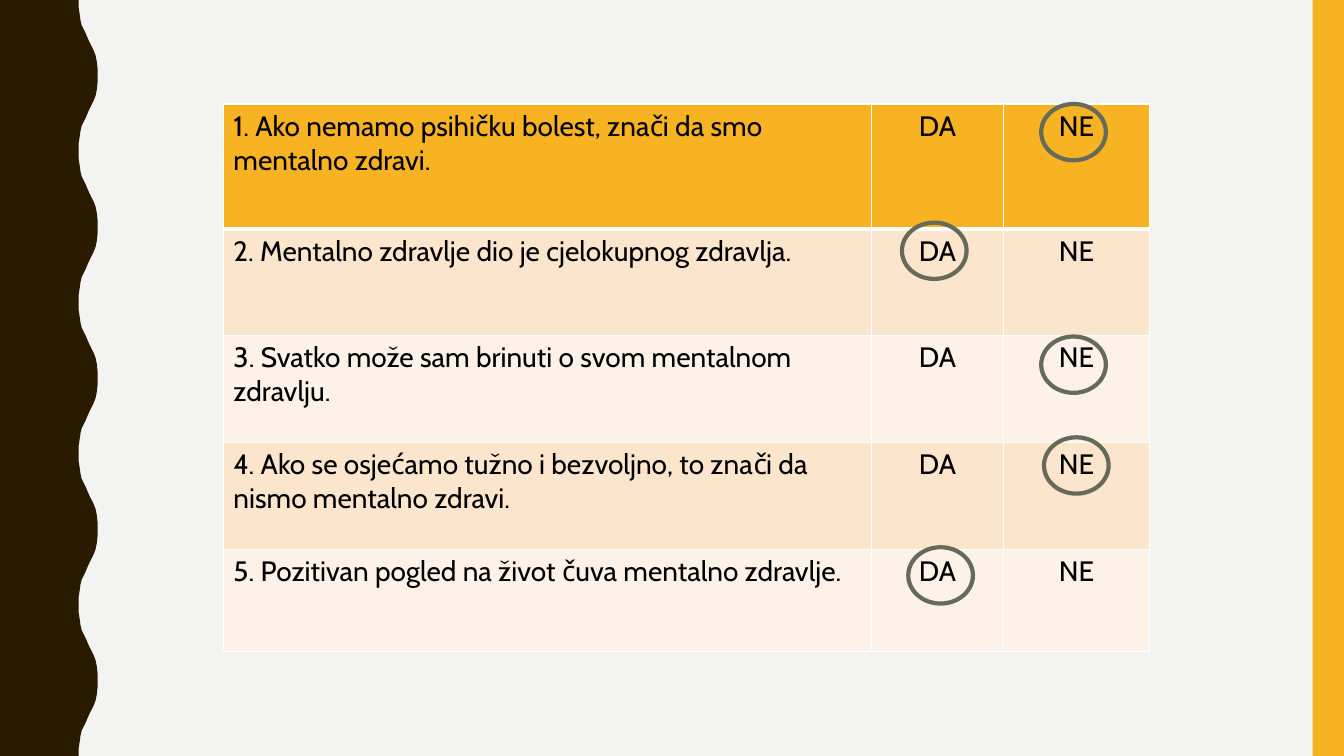
from lxml import etree
from pptx import Presentation
from pptx import util as u
from pptx.dml.color import RGBColor
from pptx.enum import shapes, text
from pptx.oxml.ns import qn

THEME = {
    "font": "Cabin",
    "size": u.Pt(20),
    "ink": "000000",
    "background": "F3F3F2",
    "wave": "2A1A00",
    "accent": "F8B323",
    "bands": ("FCE5CD", "FEF2E8"),
    "border": "FFFFFF",
    "ring": "656A59",
    "thin": u.Pt(1),
    "thick": u.Pt(3),
}

ANSWERS = ("DA", "NE")
STATEMENTS = [
    ("1. Ako nemamo psihičku bolest, znači da smo mentalno zdravi.", 3.15),
    ("2. Mentalno zdravlje dio je cjelokupnog zdravlja.", 2.69),
    ("3. Svatko može sam brinuti o svom mentalnom zdravlju.", 2.69),
    ("4. Ako se osjećamo tužno i bezvoljno, to znači da nismo mentalno zdravi.", 2.69),
    ("5. Pozitivan pogled na život čuva mentalno zdravlje.", 2.57),
]
RINGS = [(22.73, 5.61), (26.24, 8.48), (26.24, 2.62), (26.31, 11.02), (22.89, 13.79)]
RING_SIZE = (1.63, 1.42)

SLIDE_SIZE = (33.87, 19.05)
TABLE_ORIGIN = (5.63, 2.62)
COLUMNS = (16.33, 3.33, 3.68)
STRIPE_WIDTH = 0.79

WAVE_COUNT = 5
WAVE_PERIOD = SLIDE_SIZE[1] / WAVE_COUNT
WAVE_CREST = 2.46
WAVE_RISE = [
    (1.98, 0), (1.98, 0.18), (2.01, 0.36), (2.03, 0.51), (2.06, 0.64),
    (2.11, 0.74), (2.16, 0.84), (2.21, 0.96), (2.26, 1.07), (2.31, 1.17),
    (2.36, 1.27), (2.41, 1.4), (2.44, 1.55), (2.46, 1.73),
]


def color(name):
    return RGBColor.from_string(name)


def paint(shape, fill):
    shape.shadow.inherit = False
    shape.fill.solid()
    shape.fill.fore_color.rgb = color(fill)
    shape.line.fill.background()


def add_wave(slide):
    crest = (WAVE_CREST, WAVE_PERIOD / 2)
    fall = [(x, WAVE_PERIOD - y) for x, y in reversed(WAVE_RISE)]
    one_wave = WAVE_RISE + [crest] + fall
    edge = [(x, y + n * WAVE_PERIOD) for n in range(WAVE_COUNT) for x, y in one_wave]
    outline = [(u.Cm(x), u.Cm(y)) for x, y in edge + [(0, SLIDE_SIZE[1])]]
    builder = slide.shapes.build_freeform(0, 0)
    builder.add_line_segments(outline, close=True)
    paint(builder.convert_to_shape(), THEME["wave"])


def add_stripe(slide):
    stripe = slide.shapes.add_shape(
        shapes.MSO_SHAPE.RECTANGLE, u.Cm(SLIDE_SIZE[0] - STRIPE_WIDTH), 0,
        u.Cm(STRIPE_WIDTH), u.Cm(SLIDE_SIZE[1]))
    paint(stripe, THEME["accent"])


def add_borders(cell, row):
    properties = cell._tc.get_or_add_tcPr()
    widths = {
        "a:lnL": THEME["thin"],
        "a:lnR": THEME["thin"],
        "a:lnT": THEME["thick"] if row == 1 else THEME["thin"],
        "a:lnB": THEME["thick"] if row == 0 else THEME["thin"],
    }
    for position, (side, width) in enumerate(widths.items()):
        border = etree.Element(qn(side), w=str(int(width)))
        fill = etree.SubElement(border, qn("a:solidFill"))
        etree.SubElement(fill, qn("a:srgbClr"), val=THEME["border"])
        properties.insert(position, border)


def fill_cell(cell, wording, row, column):
    cell.fill.solid()
    band = THEME["bands"][(row - 1) % 2]
    cell.fill.fore_color.rgb = color(THEME["accent"] if row == 0 else band)
    add_borders(cell, row)
    paragraph = cell.text_frame.paragraphs[0]
    if column:
        paragraph.alignment = text.PP_ALIGN.CENTER
    run = paragraph.add_run()
    run.text = wording
    formats = {"name": THEME["font"], "size": THEME["size"], "bold": False}
    for attribute, value in formats.items():
        setattr(run.font, attribute, value)
    run.font.color.rgb = color(THEME["ink"])


def add_quiz(slide):
    heights = [height for _, height in STATEMENTS]
    box = (*TABLE_ORIGIN, sum(COLUMNS), sum(heights))
    table = slide.shapes.add_table(
        len(STATEMENTS), len(COLUMNS), *(u.Cm(length) for length in box)).table
    for column, width in zip(table.columns, COLUMNS):
        column.width = u.Cm(width)
    for row, (statement, height) in enumerate(STATEMENTS):
        table.rows[row].height = u.Cm(height)
        for column, wording in enumerate((statement, *ANSWERS)):
            fill_cell(table.cell(row, column), wording, row, column)


def add_rings(slide):
    for origin in RINGS:
        ring = slide.shapes.add_shape(
            shapes.MSO_SHAPE.OVAL, *(u.Cm(length) for length in origin + RING_SIZE))
        ring.shadow.inherit = False
        ring.fill.background()
        ring.line.color.rgb = color(THEME["ring"])
        ring.line.width = THEME["thick"]


def main():
    presentation = Presentation()
    presentation.slide_width, presentation.slide_height = map(u.Cm, SLIDE_SIZE)
    slide = presentation.slides.add_slide(presentation.slide_layouts[6])
    slide.background.fill.solid()
    slide.background.fill.fore_color.rgb = color(THEME["background"])
    add_wave(slide)
    add_stripe(slide)
    add_quiz(slide)
    add_rings(slide)
    presentation.save("out.pptx")


if __name__ == "__main__":
    main()
